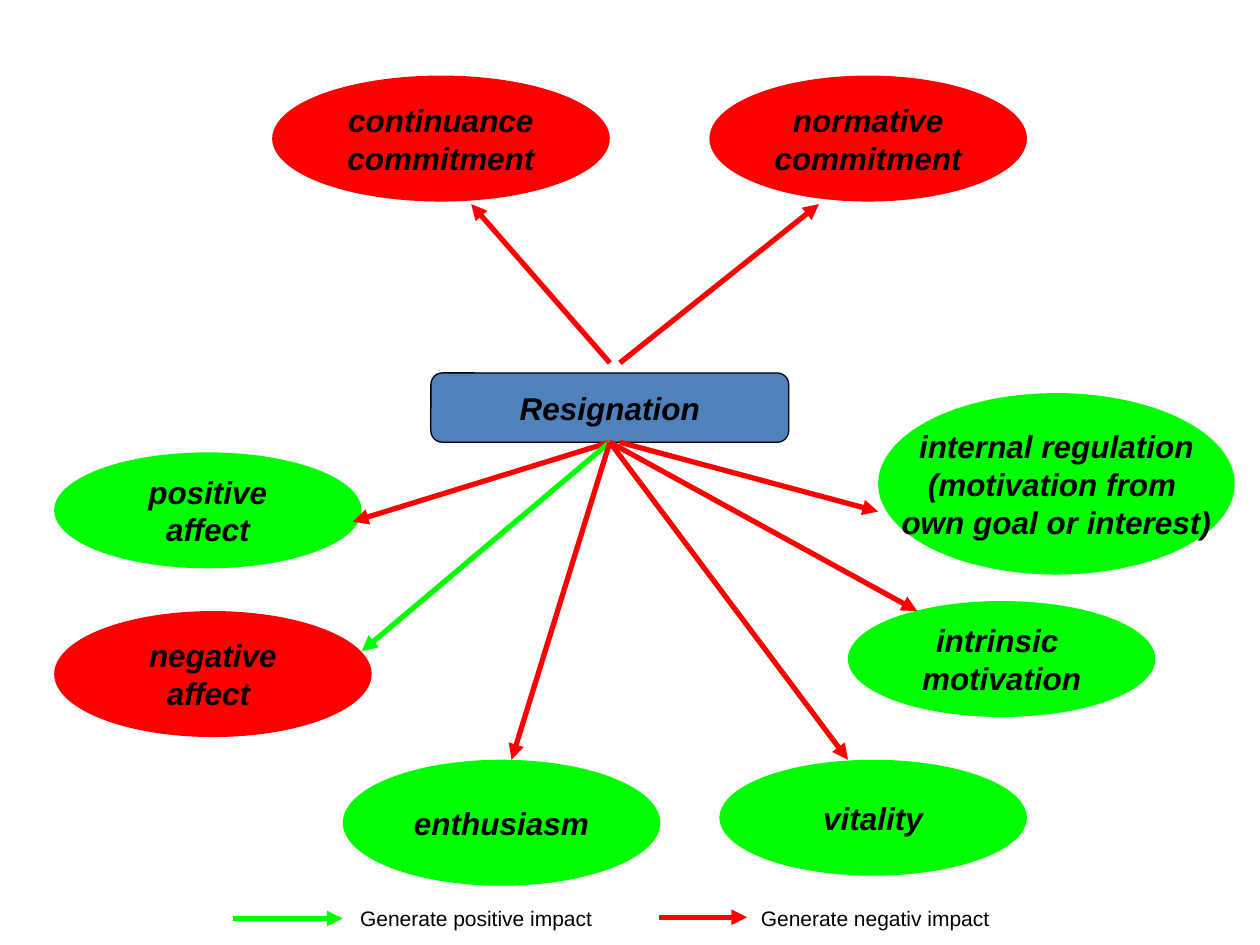
"""Build a slide that maps the impacts of resignation on commitment, affect and motivation."""
from dataclasses import dataclass

from lxml import etree
from pptx import Presentation
from pptx import util as u
from pptx.dml.color import RGBColor
from pptx.enum import shapes, text
from pptx.oxml.ns import qn
from pptx.slide import Slide
from pptx.text.text import TextFrame

COLORS = {"positive": "00FF00", "negative": "FF0000", "center": "4F81BD", "ink": "000000"}
NODE_FONT = {"name": "Arial", "size": u.Pt(18), "bold": True, "italic": True}
LEGEND_FONT = {"name": "Arial", "size": u.Pt(12)}
NODE_FRAME = {"word_wrap": False, "vertical_anchor": text.MSO_ANCHOR.MIDDLE}
LEGEND_FRAME = {"word_wrap": True, "vertical_anchor": text.MSO_ANCHOR.TOP}


@dataclass(frozen=True)
class Node:
    label: str
    left: float
    top: float
    width: float
    height: float
    color: str
    kind: shapes.MSO_SHAPE = shapes.MSO_SHAPE.OVAL


@dataclass(frozen=True)
class Arrow:
    start: tuple[float, float]
    end: tuple[float, float]
    color: str = "negative"


@dataclass(frozen=True)
class LegendEntry:
    label: str
    text_left: float
    arrow: Arrow


CENTER = Node("Resignation", 3.42, 2.96, 2.84, 0.55, "center",
              shapes.MSO_SHAPE.FLOWCHART_ALTERNATE_PROCESS)
OUTCOMES = [
    Node("enthusiasm", 2.72, 6.03, 2.52, 1, "positive"),
    Node("vitality", 5.71, 6.03, 2.44, 0.92, "positive"),
    Node("positive\naffect", 0.43, 3.59, 2.44, 0.92, "positive"),
    Node("internal regulation\n(motivation from \vown goal or interest)",
         6.97, 3.12, 2.83, 1.44, "positive"),
    Node("continuance\vcommitment", 2.16, 0.6, 2.68, 1, "negative"),
    Node("normative\ncommitment", 5.63, 0.6, 2.52, 1, "negative"),
    Node("intrinsic \vmotivation", 6.73, 4.77, 2.44, 0.92, "positive"),
    Node("negative\naffect ", 0.43, 4.85, 2.52, 1, "negative"),
]
ABOVE, ABOVE_RIGHT = (4.84, 2.88), (4.92, 2.88)
BELOW, BELOW_RIGHT = (4.84, 3.51), (4.92, 3.51)
IMPACTS = [
    Arrow(ABOVE_RIGHT, (6.5, 1.62)),
    Arrow(ABOVE, (3.74, 1.62)),
    Arrow(BELOW, (2.8, 4.14)),
    Arrow(BELOW, (2.87, 5.17), "positive"),
    Arrow(BELOW, (4.06, 6.03)),
    Arrow(BELOW, (6.73, 6.03)),
    Arrow(BELOW, (7.28, 4.85)),
    Arrow(BELOW_RIGHT, (6.97, 4.06)),
]
LEGEND = [
    LegendEntry("Generate positive impact", 2.76, Arrow((1.85, 7.29), (2.72, 7.29), "positive")),
    LegendEntry("Generate negativ impact", 5.94, Arrow((5.23, 7.28), (5.93, 7.28))),
]


def rgb(name: str) -> RGBColor:
    """Return the named palette colour."""
    return RGBColor.from_string(COLORS[name])


def apply_format(target: object, values: dict) -> None:
    """Set each format value on the target."""
    for name, value in values.items():
        setattr(target, name, value)


def write_text(frame: TextFrame, label: str, layout: dict, font: dict,
               alignment: text.PP_ALIGN) -> None:
    """Fill a text frame and format its paragraphs."""
    frame.text = label
    apply_format(frame, layout)
    for paragraph in frame.paragraphs:
        paragraph.alignment = alignment
        for run in paragraph.runs:
            apply_format(run.font, font)
            run.font.color.rgb = rgb("ink")


def draw_node(slide: Slide, node: Node) -> None:
    """Draw one labelled shape, outlined only when it is the centre."""
    box = map(u.Inches, (node.left, node.top, node.width, node.height))
    shape = slide.shapes.add_shape(node.kind, *box)
    shape.shadow.inherit = False
    shape.fill.solid()
    shape.fill.fore_color.rgb = rgb(node.color)
    if node is CENTER:
        shape.line.color.rgb = rgb("ink")
        shape.line.width = u.Pt(0.75)
    else:
        shape.line.fill.background()
    write_text(shape.text_frame, node.label, NODE_FRAME, NODE_FONT, text.PP_ALIGN.CENTER)


def draw_arrow(slide: Slide, arrow: Arrow) -> None:
    """Draw a straight line with a triangle at its end."""
    points = map(u.Inches, (*arrow.start, *arrow.end))
    connector = slide.shapes.add_connector(shapes.MSO_CONNECTOR.STRAIGHT, *points)
    connector.line.color.rgb = rgb(arrow.color)
    connector.line.width = u.Pt(3)
    etree.SubElement(connector.line._get_or_add_ln(), qn("a:tailEnd"), type="triangle")
    etree.SubElement(connector._element.spPr, qn("a:effectLst"))


def draw_legend_entry(slide: Slide, entry: LegendEntry) -> None:
    """Draw a legend label and its sample arrow."""
    box = map(u.Inches, (entry.text_left, 7.14, 2.4, 0.3))
    label = slide.shapes.add_textbox(*box)
    write_text(label.text_frame, entry.label, LEGEND_FRAME, LEGEND_FONT, text.PP_ALIGN.LEFT)
    draw_arrow(slide, entry.arrow)


def main() -> None:
    """Build and save the presentation."""
    presentation = Presentation()
    presentation.slide_width = u.Inches(10)
    presentation.slide_height = u.Inches(7.5)
    slide = presentation.slides.add_slide(presentation.slide_layouts[6])
    for node in [CENTER, *OUTCOMES]:
        draw_node(slide, node)
    for impact in IMPACTS:
        draw_arrow(slide, impact)
    for entry in LEGEND:
        draw_legend_entry(slide, entry)
    presentation.save("out.pptx")


if __name__ == "__main__":
    main()
